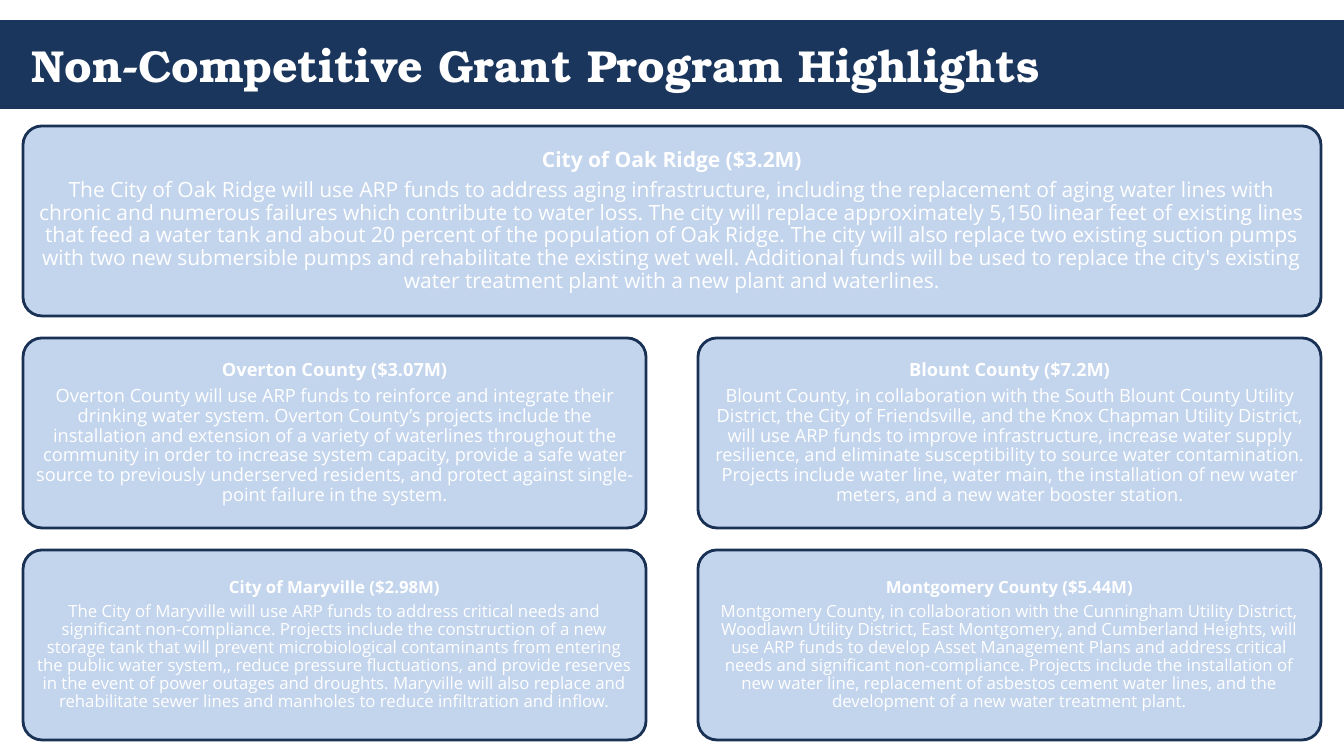
from dataclasses import dataclass

from pptx import Presentation
from pptx.dml.color import RGBColor
from pptx.enum.shapes import MSO_SHAPE
from pptx.enum.text import MSO_ANCHOR, PP_ALIGN
from pptx.util import Emu, Pt

RECTANGLE = MSO_SHAPE.RECTANGLE
ROUNDED = MSO_SHAPE.ROUNDED_RECTANGLE
MIDDLE = MSO_ANCHOR.MIDDLE
LEFT, CENTER = PP_ALIGN.LEFT, PP_ALIGN.CENTER


@dataclass(frozen=True)
class Theme:
    navy: RGBColor = RGBColor.from_string("1B365D")
    border: RGBColor = RGBColor.from_string("193154")
    card: RGBColor = RGBColor.from_string("C3D4ED")
    white: RGBColor = RGBColor.from_string("FFFFFF")
    title_font: str = "TeX Gyre Bonum"
    body_font: str = "Open Sans"
    title_size: int = 32
    row_sizes: tuple = (15, 13, 12)
    row_insets: tuple = (6, 5, 5)


THEME = Theme()


def px(value):
    return Emu(round(value * 914400 / 100.8))


def write_text(paragraph, text, *, size, font=THEME.body_font, bold=False,
               align=CENTER, line_spacing=0.9, space_after=0):
    paragraph.alignment = align
    paragraph.line_spacing = line_spacing
    paragraph.space_after = Pt(space_after)
    run = paragraph.add_run()
    run.text = text
    run.font.name = font
    run.font.size = Pt(size)
    run.font.bold = bold
    run.font.color.rgb = THEME.white


presentation = Presentation()
presentation.slide_width = px(1344)
presentation.slide_height = px(756)
slide = presentation.slides.add_slide(presentation.slide_layouts[6])

banner = slide.shapes.add_shape(RECTANGLE, px(0), px(20), px(1344), px(89))
banner.shadow.inherit = False
banner.fill.solid()
banner.fill.fore_color.rgb = THEME.navy
banner.line.fill.background()

title = slide.shapes.add_textbox(px(22), px(19), px(1299), px(91))
title.text_frame.word_wrap = True
title.text_frame.vertical_anchor = MIDDLE
write_text(title.text_frame.paragraphs[0], "Non-Competitive Grant Program Highlights",
           size=THEME.title_size, font=THEME.title_font, bold=True,
           align=LEFT, line_spacing=1.0)

CARD_LEFT, CARD_TOP, CARD_HEIGHT = 23, 126, 190
WIDE, NARROW = 1298, 623
COLUMN_STEP, ROW_STEP = 675, 212

grants = [
    (0, 0, WIDE, "City of Oak Ridge ($3.2M)",
     "The City of Oak Ridge will use ARP funds to address aging infrastructure, "
     "including the replacement of aging water lines with chronic and numerous failures "
     "which contribute to water loss. The city will replace approximately 5,150 linear "
     "feet of existing lines that feed a water tank and about 20 percent of the "
     "population of Oak Ridge. The city will also replace two existing suction pumps "
     "with two new submersible pumps and rehabilitate the existing wet well. Additional "
     "funds will be used to replace the city's existing water treatment plant with a new "
     "plant and waterlines."),
    (1, 0, NARROW, "Overton County ($3.07M)",
     "Overton County will use ARP funds to reinforce and integrate their drinking water "
     "system. Overton County’s projects include the installation and extension of a "
     "variety of waterlines throughout the community in order to increase system "
     "capacity, provide a safe water source to previously underserved residents, and "
     "protect against single-point failure in the system."),
    (2, 0, NARROW, "City of Maryville ($2.98M)",
     "The City of Maryville will use ARP funds to address critical needs and significant "
     "non-compliance. Projects include the construction of a new storage tank that will "
     "prevent microbiological contaminants from entering the public water system,, "
     "reduce pressure fluctuations, and provide reserves in the event of power outages "
     "and droughts. Maryville will also replace and rehabilitate sewer lines and "
     "manholes to reduce infiltration and inflow."),
    (1, 1, NARROW, "Blount County ($7.2M)",
     "Blount County, in collaboration with the South Blount County Utility District, the "
     "City of Friendsville, and the Knox Chapman Utility District, will use ARP funds to "
     "improve infrastructure, increase water supply resilience, and eliminate "
     "susceptibility to source water contamination. Projects include water line, water "
     "main, the installation of new water meters, and a new water booster station."),
    (2, 1, NARROW, "Montgomery County ($5.44M)",
     "Montgomery County, in collaboration with the Cunningham Utility District, Woodlawn "
     "Utility District, East Montgomery, and Cumberland Heights, will use ARP funds to "
     "develop Asset Management Plans and address critical needs and significant "
     "non-compliance. Projects include the installation of new water line, replacement "
     "of asbestos cement water lines, and the development of a new water treatment "
     "plant."),
]

for row, column, width, heading, description in grants:
    card = slide.shapes.add_shape(
        ROUNDED, px(CARD_LEFT + column * COLUMN_STEP), px(CARD_TOP + row * ROW_STEP),
        px(width), px(CARD_HEIGHT))
    card.adjustments[0] = 0.1
    card.shadow.inherit = False
    card.fill.solid()
    card.fill.fore_color.rgb = THEME.card
    card.line.color.rgb = THEME.border
    card.line.width = Pt(2)

    frame = card.text_frame
    frame.word_wrap = True
    frame.vertical_anchor = MIDDLE
    inset = px(THEME.row_insets[row])
    frame.margin_left = frame.margin_right = inset
    frame.margin_top = frame.margin_bottom = inset

    size = THEME.row_sizes[row]
    gap = round(size * 0.35, 1)
    write_text(frame.paragraphs[0], heading, size=size, bold=True, space_after=gap)
    write_text(frame.add_paragraph(), description, size=size, space_after=gap)

presentation.save("out.pptx")
